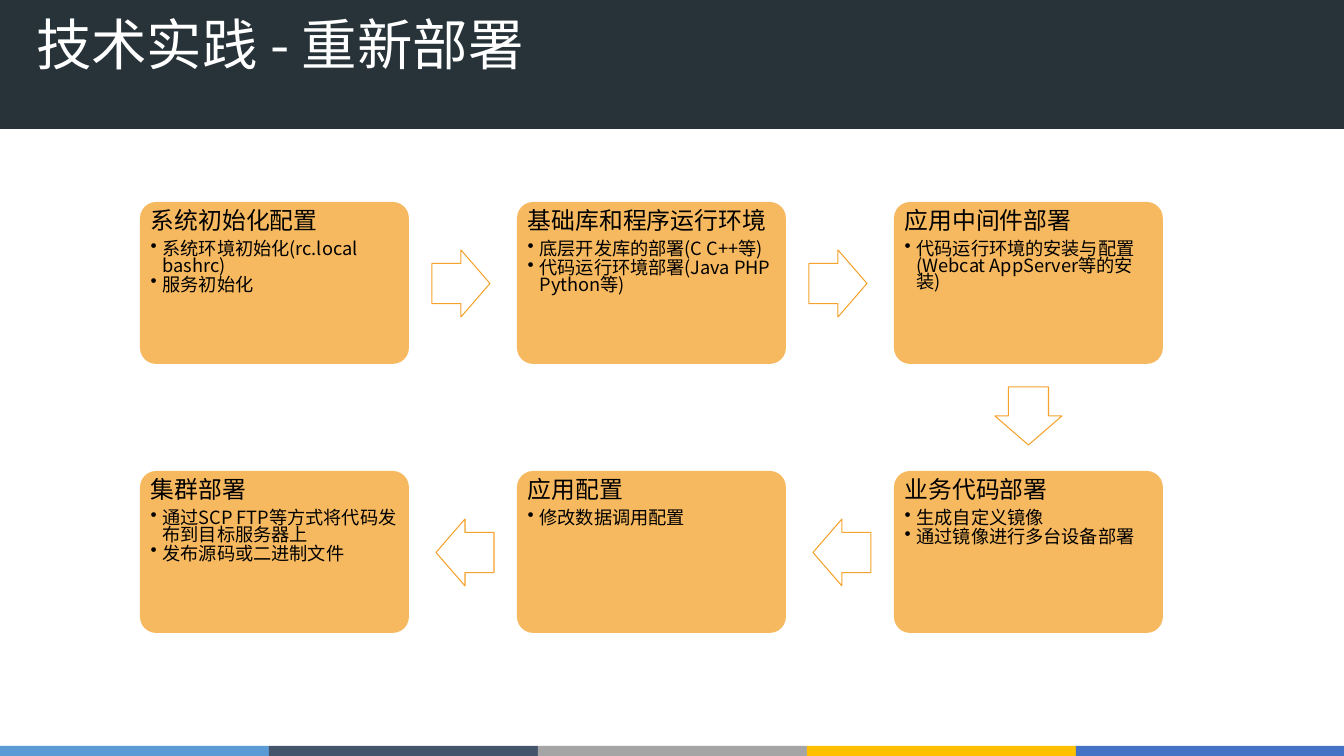
import pptx
import pptx.dml.color
import pptx.enum.shapes
import pptx.enum.text
import pptx.oxml
import pptx.oxml.ns
import pptx.util

SLIDE_WIDTH, SLIDE_HEIGHT = 1344, 756
EMU_PER_PX = 914400 / 100.8
SHAPE = pptx.enum.shapes.MSO_SHAPE
ANCHOR = pptx.enum.text.MSO_ANCHOR

HEADER_HEIGHT = 129
STRIPE_COLOURS = ["5B9BD5", "44546A", "A5A5A5", "FFC000", "4472C4"]
STRIPE_WIDTH, STRIPE_HEIGHT = 269, 10

CARD_LEFT, CARD_TOP = 140, 202
CARD_WIDTH, CARD_HEIGHT = 269, 162
COLUMN_STEP, ROW_STEP = 377, 269

# Column, row, heading, bullets, arrow leading to the next step
STEPS = [
    (0, 0, "系统初始化配置",
     ["系统环境初始化(rc.local bashrc)", "服务初始化"], "right"),
    (1, 0, "基础库和程序运行环境",
     ["底层开发库的部署(C C++等)", "代码运行环境部署(Java PHP Python等)"], "right"),
    (2, 0, "应用中间件部署",
     ["代码运行环境的安装与配置(Webcat AppServer等的安装)"], "down"),
    (2, 1, "业务代码部署",
     ["生成自定义镜像", "通过镜像进行多台设备部署"], "left"),
    (1, 1, "应用配置", ["修改数据调用配置"], "left"),
    (0, 1, "集群部署",
     ["通过SCP FTP等方式将代码发布到目标服务器上", "发布源码或二进制文件"], None),
]

# Preset, offset from the card's corner, size
ARROWS = {
    "right": (SHAPE.RIGHT_ARROW, 292, 48, 58, 67),
    "down": (SHAPE.DOWN_ARROW, 101, 185, 67, 58),
    "left": (SHAPE.LEFT_ARROW, -81, 48, 58, 67),
}


def px(length):
    return pptx.util.Emu(round(length * EMU_PER_PX))


def rgb(colour):
    return pptx.dml.color.RGBColor.from_string(colour)


def add_child(parent, tag, **attributes):
    child = pptx.oxml.parse_xml(f"<{tag} {pptx.oxml.ns.nsdecls('a')}/>")
    for name, value in attributes.items():
        child.set(name, str(value))
    parent.append(child)


class FlowSlide:
    font = "Noto Sans CJK SC"
    accent = "F5A22C"

    def __init__(self, presentation):
        self.slide = presentation.slides.add_slide(presentation.slide_layouts[5])

    def add_text(self, paragraph, text, size, colour="000000", line_spacing=0.75,
                 space_after=0, bullet=False):
        """Fill a paragraph with one formatted run."""
        paragraph.alignment = pptx.enum.text.PP_ALIGN.LEFT
        paragraph.line_spacing = line_spacing
        paragraph.space_before = pptx.util.Pt(0)
        paragraph.space_after = pptx.util.Pt(space_after)
        run = paragraph.add_run()
        run.text = text
        run.font.size = pptx.util.Pt(size)
        run.font.color.rgb = rgb(colour)
        run.font.name = self.font
        add_child(run.font._element, "a:ea", typeface=self.font)
        if bullet:
            properties = paragraph._p.get_or_add_pPr()
            properties.set("marL", str(px(12)))
            properties.set("indent", str(px(-12)))
            add_child(properties, "a:buChar", char="•")

    def shape(self, preset, left, top, width, height, fill=None, line=None):
        shape = self.slide.shapes.add_shape(
            preset, px(left), px(top), px(width), px(height))
        shape.shadow.inherit = False
        if fill:
            shape.fill.solid()
            shape.fill.fore_color.rgb = rgb(fill)
        else:
            shape.fill.background()
        if line:
            shape.line.color.rgb = rgb(line)
            shape.line.width = pptx.util.Pt(0.75)
        else:
            shape.line.fill.background()
        return shape

    def title(self, text):
        title = self.slide.shapes.title
        title.left, title.top = px(26), px(11)
        title.width, title.height = px(1134), px(74)
        frame = title.text_frame
        frame.auto_size = pptx.enum.text.MSO_AUTO_SIZE.NONE
        frame.vertical_anchor = ANCHOR.MIDDLE
        self.add_text(frame.paragraphs[0], text, size=39.6, colour="FFFFFF",
                      line_spacing=0.9)
        # The title stands in front of the header band
        title.element.getparent().append(title.element)

    def card(self, left, top, heading, bullets):
        card = self.shape(SHAPE.ROUNDED_RECTANGLE, left, top,
                          CARD_WIDTH, CARD_HEIGHT, fill=self.accent)
        card.adjustments[0] = 0.1
        colour = card.element.find(".//" + pptx.oxml.ns.qn("a:srgbClr"))
        add_child(colour, "a:alpha", val=75000)
        frame = card.text_frame
        frame.word_wrap = True
        frame.vertical_anchor = ANCHOR.TOP
        frame.margin_left = frame.margin_right = px(6)
        frame.margin_top = frame.margin_bottom = px(6)
        self.add_text(frame.paragraphs[0], heading, size=17, space_after=6)
        for bullet in bullets:
            self.add_text(frame.add_paragraph(), bullet, size=13, space_after=2,
                          bullet=True)

    def arrow(self, card_left, card_top, direction):
        preset, across, down, width, height = ARROWS[direction]
        arrow = self.shape(preset, card_left + across, card_top + down,
                           width, height, line=self.accent)
        arrow.adjustments[0] = 0.6
        arrow.adjustments[1] = 0.5


def main():
    presentation = pptx.Presentation()
    presentation.slide_width = px(SLIDE_WIDTH)
    presentation.slide_height = px(SLIDE_HEIGHT)
    flow = FlowSlide(presentation)

    flow.shape(SHAPE.RECTANGLE, 0, 0, SLIDE_WIDTH, HEADER_HEIGHT, fill="273339")
    for index, colour in enumerate(STRIPE_COLOURS):
        left = index * STRIPE_WIDTH
        flow.shape(SHAPE.RECTANGLE, left, SLIDE_HEIGHT - STRIPE_HEIGHT,
                   min(STRIPE_WIDTH, SLIDE_WIDTH - left), STRIPE_HEIGHT, fill=colour)
    flow.title("技术实践 - 重新部署")

    for column, row, heading, bullets, direction in STEPS:
        left = CARD_LEFT + column * COLUMN_STEP
        top = CARD_TOP + row * ROW_STEP
        flow.card(left, top, heading, bullets)
        if direction:
            flow.arrow(left, top, direction)

    presentation.save("out.pptx")


if __name__ == "__main__":
    main()
